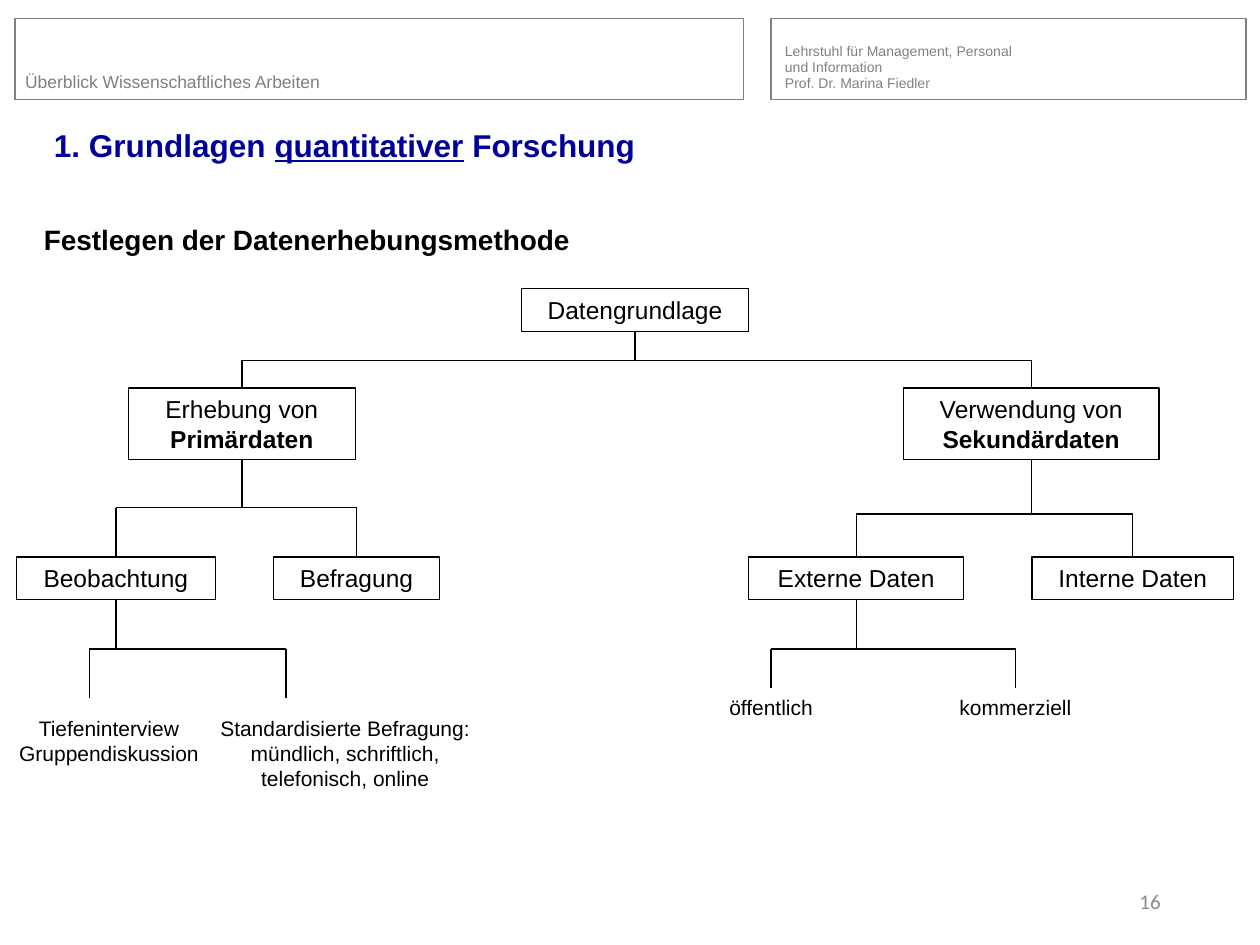
from lxml import etree
from pptx import Presentation
from pptx.dml.color import RGBColor
from pptx.enum import shapes, text
from pptx.oxml.ns import qn
from pptx.util import Inches, Pt

BLACK = RGBColor(0x00, 0x00, 0x00)
NAVY = RGBColor(0x00, 0x00, 0x99)
GREY = RGBColor(0x80, 0x80, 0x80)
LIGHT_GREY = RGBColor(0x8C, 0x8C, 0x8C)
CENTER = text.PP_ALIGN.CENTER
MIDDLE = text.MSO_ANCHOR.MIDDLE
BOTTOM = text.MSO_ANCHOR.BOTTOM
LINE_WIDTH = Pt(0.75)
BOTTOM_SITE, TOP_SITE = 2, 0


def add_run(paragraph, wording, size, color=BLACK, bold=False, underline=False, font="Arial"):
    run = paragraph.add_run()
    run.text = wording
    run.font.name = font
    run.font.size = Pt(size)
    run.font.color.rgb = color
    run.font.bold = bold
    run.font.underline = underline


def add_textbox(slide, place, anchor=text.MSO_ANCHOR.TOP, inset=True):
    box = slide.shapes.add_textbox(*map(Inches, place))
    frame = box.text_frame
    frame.word_wrap = True
    frame.vertical_anchor = anchor
    if not inset:
        frame.margin_left = frame.margin_right = 0
        frame.margin_top = frame.margin_bottom = 0
    return box


def add_frame(slide, place, color=BLACK):
    """Add an unfilled, thinly outlined rectangle."""
    frame = slide.shapes.add_shape(shapes.MSO_SHAPE.RECTANGLE, *map(Inches, place))
    frame.shadow.inherit = False
    frame.fill.background()
    frame.line.color.rgb = color
    frame.line.width = LINE_WIDTH
    return frame


def add_node(slide, place, wording, emphasis=""):
    node = add_frame(slide, place)
    node.text_frame.word_wrap = True
    node.text_frame.auto_size = text.MSO_AUTO_SIZE.SHAPE_TO_FIT_TEXT
    node.text_frame.vertical_anchor = text.MSO_ANCHOR.TOP
    paragraph = node.text_frame.paragraphs[0]
    paragraph.alignment = CENTER
    add_run(paragraph, wording, 14)
    if emphasis:
        add_run(paragraph, emphasis, 14, bold=True)
    return node


def add_leaf(slide, place, *lines):
    leaf = add_textbox(slide, place)
    frame = leaf.text_frame
    frame.auto_size = text.MSO_AUTO_SIZE.SHAPE_TO_FIT_TEXT
    for index, line in enumerate(lines):
        paragraph = frame.add_paragraph() if index else frame.paragraphs[0]
        paragraph.alignment = CENTER
        add_run(paragraph, line, 12)
    return leaf


def add_line(slide, x1, y1, x2, y2):
    line = slide.shapes.add_connector(shapes.MSO_CONNECTOR.STRAIGHT, x1, y1, x2, y2)
    line.line.color.rgb = BLACK
    line.line.width = LINE_WIDTH
    etree.SubElement(line._element.spPr, qn("a:effectLst"))
    return line


def middle(box):
    return box.left + box.width // 2


def add_branch(slide, parent, bar_y, children=(), drops=()):
    """Join a parent to child boxes, or to free (x, y) drop ends, by way of a bar."""
    bar = Inches(bar_y)
    trunk = add_line(slide, middle(parent), parent.top + parent.height, middle(parent), bar)
    trunk.begin_connect(parent, BOTTOM_SITE)
    ends = [middle(child) for child in children]
    for child, x in zip(children, ends):
        add_line(slide, x, bar, x, child.top).end_connect(child, TOP_SITE)
    for x, y in drops:
        ends.append(Inches(x))
        add_line(slide, Inches(x), bar, Inches(x), Inches(y))
    add_line(slide, min(ends), bar, max(ends), bar)


def add_header(slide):
    add_frame(slide, (0.12, 0.15, 5.78, 0.64), GREY)
    add_frame(slide, (6.12, 0.15, 3.77, 0.64), GREY)
    topic = add_textbox(slide, (0.2, 0.3, 3.34, 0.43), BOTTOM, inset=False)
    add_run(topic.text_frame.paragraphs[0], "Überblick Wissenschaftliches Arbeiten", 10, GREY)

    chair = add_textbox(slide, (6.23, 0.24, 2.93, 0.49), BOTTOM, inset=False).text_frame
    name, holder = chair.paragraphs[0], chair.add_paragraph()
    name.line_spacing = holder.line_spacing = 0.95
    add_run(name, "Lehrstuhl für Management, Personal ", 8, GREY)
    name.add_line_break()
    add_run(name, "und Information", 8, GREY)
    add_run(holder, "Prof. Dr. Marina Fiedler", 8, GREY)


def add_headings(slide):
    title = add_textbox(slide, (0.33, 0.92, 9.42, 0.5), MIDDLE).text_frame.paragraphs[0]
    title.line_spacing = 0.9
    add_run(title, "1. Grundlagen ", 18, NAVY, bold=True)
    add_run(title, "quantitativer", 18, NAVY, bold=True, underline=True)
    add_run(title, " Forschung", 18, NAVY, bold=True)

    subtitle = add_textbox(slide, (0.25, 1.72, 9.5, 0.4))
    add_run(subtitle.text_frame.paragraphs[0], "Festlegen der Datenerhebungsmethode", 16, bold=True)


def add_tree(slide):
    root = add_node(slide, (4.14, 2.29, 1.8, 0.34), "Datengrundlage")
    primary = add_node(slide, (1.02, 3.08, 1.8, 0.57), "Erhebung von ", "Primärdaten")
    secondary = add_node(slide, (7.17, 3.08, 2.03, 0.57), "Verwendung von ", "Sekundärdaten")
    observation = add_node(slide, (0.13, 4.42, 1.58, 0.34), "Beobachtung")
    survey = add_node(slide, (2.17, 4.42, 1.32, 0.34), "Befragung")
    external = add_node(slide, (5.94, 4.42, 1.71, 0.34), "Externe Daten")
    internal = add_node(slide, (8.19, 4.42, 1.6, 0.34), "Interne Daten")

    public = add_leaf(slide, (5.32, 5.46, 1.6, 0.3), "öffentlich")
    commercial = add_leaf(slide, (7.26, 5.46, 1.6, 0.3), "kommerziell")
    add_leaf(slide, (0.02, 5.63, 1.69, 0.5), "Tiefeninterview", "Gruppendiskussion")
    add_leaf(slide, (1.64, 5.63, 2.2, 0.71),
             "Standardisierte Befragung: mündlich, schriftlich, telefonisch, online")

    add_branch(slide, root, 2.86, (primary, secondary))
    add_branch(slide, primary, 4.03, (observation, survey))
    add_branch(slide, secondary, 4.08, (external, internal))
    add_branch(slide, observation, 5.15, drops=((0.71, 5.54), (2.27, 5.54)))
    add_branch(slide, external, 5.15, (public, commercial))


def add_page_number(slide):
    number = add_textbox(slide, (7.06, 6.95, 2.25, 0.4), MIDDLE).text_frame.paragraphs[0]
    number.alignment = text.PP_ALIGN.RIGHT
    add_run(number, "16", 12, LIGHT_GREY, font="Calibri")


def main():
    deck = Presentation()
    deck.slide_width, deck.slide_height = Inches(10), Inches(7.5)
    slide = deck.slides.add_slide(deck.slide_layouts[6])
    add_header(slide)
    add_headings(slide)
    add_tree(slide)
    add_page_number(slide)
    deck.save("out.pptx")


if __name__ == "__main__":
    main()
